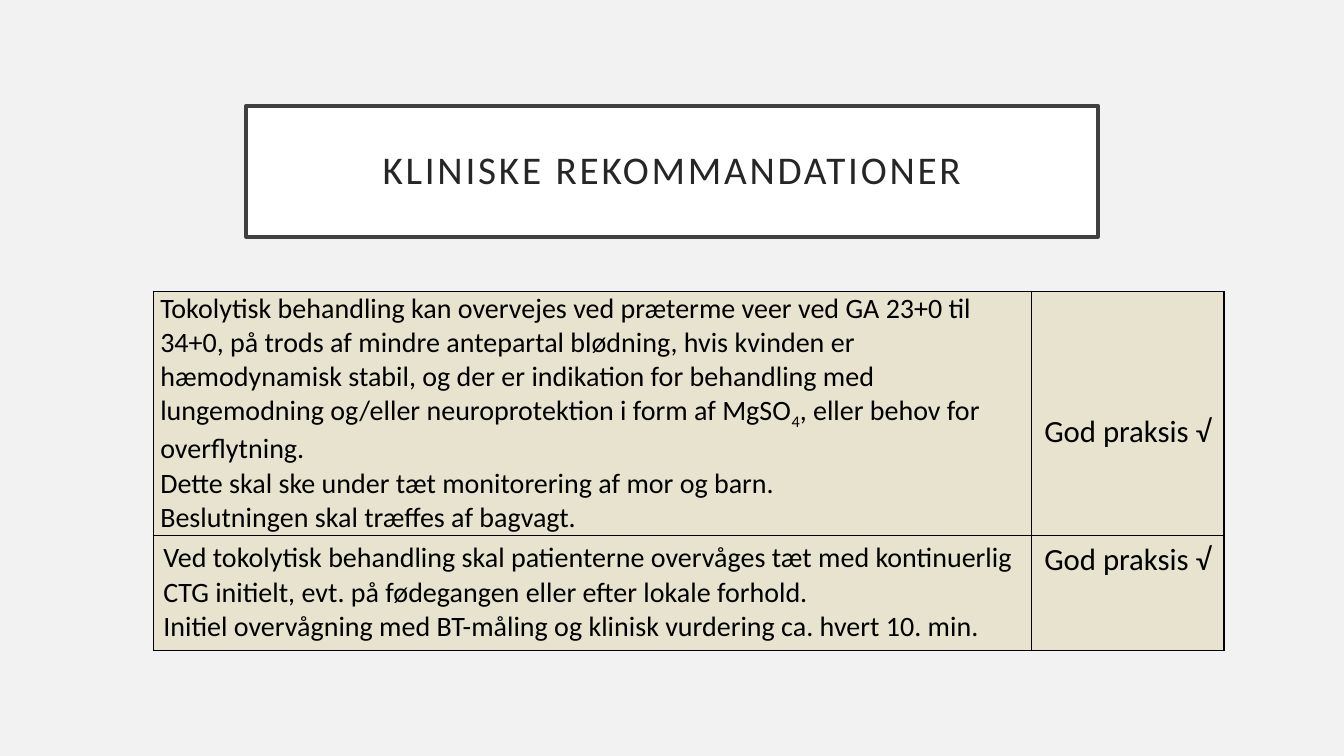
"""Build a slide of clinical recommendations: a boxed title above a two-row table."""
from lxml import etree
from pptx import Presentation
from pptx.dml.color import RGBColor
from pptx.enum import shapes, text
from pptx.oxml import ns
from pptx.util import Inches, Pt

PAPER = RGBColor(0xF2, 0xF2, 0xF2)
WHITE = RGBColor(0xFF, 0xFF, 0xFF)
FRAME = RGBColor(0x40, 0x40, 0x40)
INK = RGBColor(0x26, 0x26, 0x26)
BLACK = RGBColor(0, 0, 0)
SAND = RGBColor(0xE8, 0xE3, 0xCE)
MID, TOP = text.MSO_ANCHOR.MIDDLE, text.MSO_ANCHOR.TOP
LEFT, CENTER = text.PP_ALIGN.LEFT, text.PP_ALIGN.CENTER


def add_run(para, words, size, color):
    run = para.add_run()
    run.text = words
    run.font.name = "Calibri"
    run.font.size = Pt(size)
    run.font.color.rgb = color
    return run


def add_edges(cell):
    props = cell._tc.get_or_add_tcPr()
    for spot, side in enumerate(("lnL", "lnR", "lnT", "lnB")):
        edge = etree.Element(ns.qn("a:" + side), w=str(Pt(1)))
        fill = etree.SubElement(edge, ns.qn("a:solidFill"))
        etree.SubElement(fill, ns.qn("a:srgbClr"), val=str(BLACK))
        props.insert(spot, edge)


deck = Presentation()
deck.slide_width, deck.slide_height = Inches(13.33), Inches(7.5)
slide = deck.slides.add_slide(deck.slide_layouts[6])
slide.background.fill.solid()
slide.background.fill.fore_color.rgb = PAPER

title = slide.shapes.add_shape(shapes.MSO_SHAPE.RECTANGLE, Inches(2.44), Inches(1.05),
                               Inches(8.45), Inches(1.3))
title.shadow.inherit = False
title.fill.solid()
title.fill.fore_color.rgb = WHITE
title.line.color.rgb = FRAME
title.line.width = Pt(2.5)
frame = title.text_frame
frame.word_wrap = True
frame.vertical_anchor = MID
frame.margin_left = frame.margin_right = Inches(0.2)
frame.margin_top = frame.margin_bottom = Inches(0.2)
para = frame.paragraphs[0]
para.alignment = CENTER
para.line_spacing = 0.9
run = add_run(para, "KLINISKE REKOMMANDATIONER", 28, INK)
run.font._element.set("spc", "200")

advice = [
    [["Tokolytisk behandling kan overvejes ved præterme veer ved GA 23+0 til 34+0, "
      "på trods af mindre antepartal blødning, hvis kvinden er hæmodynamisk stabil, "
      "og der er indikation for behandling med lungemodning og/eller neuroprotektion "
      "i form af MgSO", "4", ", eller behov for overflytning."],
     ["Dette skal ske under tæt monitorering af mor og barn."],
     ["Beslutningen skal træffes af bagvagt."]],
    [["Ved tokolytisk behandling skal patienterne overvåges tæt med kontinuerlig"],
     ["CTG initielt, evt. på fødegangen eller efter lokale forhold."],
     ["Initiel overvågning med BT-måling og klinisk vurdering ca. hvert 10. min."]],
]
grade = [["God praksis √ "]]
looks = [
    [(20, LEFT, TOP, 0.07, 0, 0), (22, CENTER, MID, 0.1, 0.43, 0.06)],
    [(20, LEFT, TOP, 0.1, 0.06, 0.06), (22, CENTER, TOP, 0.1, 0.06, 0.06)],
]

table = slide.shapes.add_table(2, 2, Inches(1.52), Inches(2.89),
                               Inches(10.62), Inches(3.55)).table
table.first_row = table.horz_banding = False
for col, width in zip(table.columns, (8.71, 1.91)):
    col.width = Inches(width)
for row, height in zip(table.rows, (2.42, 1.13)):
    row.height = Inches(height)

for r, row in enumerate(looks):
    for c, (size, align, anchor, side, top, base) in enumerate(row):
        cell = table.cell(r, c)
        cell.fill.solid()
        cell.fill.fore_color.rgb = SAND
        add_edges(cell)
        cell.vertical_anchor = anchor
        cell.margin_left = cell.margin_right = Inches(side)
        cell.margin_top, cell.margin_bottom = Inches(top), Inches(base)
        frame = cell.text_frame
        for n, parts in enumerate(grade if c else advice[r]):
            para = frame.add_paragraph() if n else frame.paragraphs[0]
            para.alignment = align
            for words in parts:
                run = add_run(para, words, size, BLACK)
                if words == "4":
                    run.font._element.set("baseline", "-25000")

deck.save("out.pptx")
